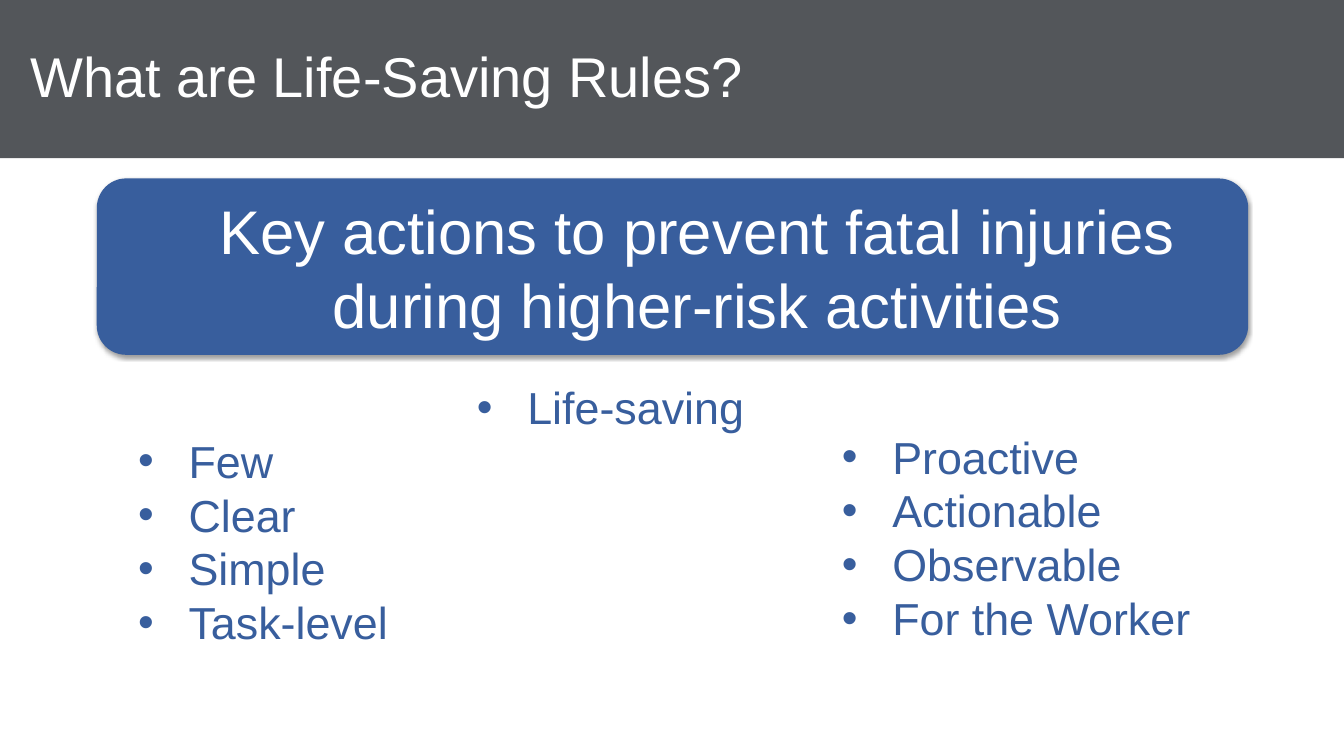
from lxml import etree
from pptx import Presentation
from pptx import util as u
from pptx.dml.color import RGBColor
from pptx.enum import shapes, text
from pptx.oxml import ns

COLORS = {"band": "53565A", "blue": "385E9D", "white": "FFFFFF", "shadow": "000000"}


def rgb(name):
    return RGBColor.from_string(COLORS[name])


def set_all(target, values):
    for name, value in values.items():
        setattr(target, name, value)


def place(item, box):
    sides = ("left", "top", "width", "height")
    set_all(item, {side: u.Inches(length) for side, length in zip(sides, box)})


def indent(para, margin, first=0.0):
    props = para._p.get_or_add_pPr()
    props.set("marL", str(u.Inches(margin)))
    props.set("indent", str(u.Inches(first)))
    return props


def format_para(para, size, color, **values):
    set_all(para, {"space_before": u.Pt(0), **values})
    set_all(para.font, {"name": "Arial", "size": u.Pt(size), "bold": False})
    para.font.color.rgb = rgb(color)


def fill_shape(item, color):
    item.fill.solid()
    item.fill.fore_color.rgb = rgb(color)
    item.line.fill.background()


def add_title_band(page, box, words):
    band = page.shapes.title
    place(band, box)
    fill_shape(band, "band")
    frame = band.text_frame
    set_all(frame, {
        "text": words, "word_wrap": True,
        "auto_size": text.MSO_AUTO_SIZE.NONE,
        "vertical_anchor": text.MSO_ANCHOR.TOP,
        "margin_left": u.Inches(0.2), "margin_right": u.Inches(0.2),
        "margin_top": u.Inches(0.49), "margin_bottom": u.Inches(0.05),
    })
    para = frame.paragraphs[0]
    indent(para, 0.1)
    format_para(para, 40, "white", alignment=text.PP_ALIGN.LEFT, line_spacing=0.9)


def add_soft_shadow(item):
    item.shadow.inherit = False
    effects = item._element.spPr.find(ns.qn("a:effectLst"))
    shadow = etree.SubElement(
        effects, ns.qn("a:outerShdw"), blurRad=str(u.Pt(3.1)), dist=str(u.Pt(1.6)),
        dir="5400000", rotWithShape="0")
    color = etree.SubElement(shadow, ns.qn("a:srgbClr"), val=COLORS["shadow"])
    etree.SubElement(color, ns.qn("a:alpha"), val="38000")


def add_key_message(page, box, words):
    panel = page.shapes.add_shape(
        shapes.MSO_SHAPE.ROUNDED_RECTANGLE, *(u.Inches(length) for length in box))
    fill_shape(panel, "blue")
    add_soft_shadow(panel)
    frame = panel.text_frame
    set_all(frame, {"text": words, "word_wrap": True,
                    "vertical_anchor": text.MSO_ANCHOR.MIDDLE})
    para = frame.paragraphs[0]
    indent(para, 0.5)
    format_para(para, 44, "white", alignment=text.PP_ALIGN.CENTER)


def add_trait_list(holder, box, traits):
    place(holder, box)
    frame = holder.text_frame
    set_all(frame, {"text": "\n".join(traits), "word_wrap": True,
                    "auto_size": text.MSO_AUTO_SIZE.NONE,
                    "vertical_anchor": text.MSO_ANCHOR.TOP})
    for para in frame.paragraphs:
        props = indent(para, 0.5, -0.5)
        etree.SubElement(props, ns.qn("a:buFont"), typeface="Arial")
        etree.SubElement(props, ns.qn("a:buChar"), char="•")
        format_para(para, 32, "blue", alignment=text.PP_ALIGN.LEFT)


def build_rules_slide(deck):
    # Comparison layout: a title and four body placeholders
    page = deck.slides.add_slide(deck.slide_layouts[4])
    holders = {holder.placeholder_format.idx: holder for holder in page.placeholders}

    # Title band and key message
    add_title_band(page, (0, 0, 13.33, 1.57), "What are Life-Saving Rules?")
    add_key_message(page, (0.96, 1.77, 11.42, 1.75),
                    "Key actions to prevent fatal injuries during higher-risk activities")

    # Traits of the rules
    add_trait_list(holders[2], (1.27, 4.25, 2.68, 2.26),
                   ["Few", "Clear", "Simple", "Task-level"])
    add_trait_list(holders[1], (4.63, 3.72, 2.87, 0.64), ["Life-saving"])
    add_trait_list(holders[4], (8.25, 4.21, 3.81, 2.26),
                   ["Proactive", "Actionable", "Observable", "For the Worker"])

    # Unused placeholder
    spare = holders[3]._element
    spare.getparent().remove(spare)


def main():
    deck = Presentation()
    set_all(deck, {"slide_width": u.Inches(13.33), "slide_height": u.Inches(7.5)})
    build_rules_slide(deck)
    deck.save("out.pptx")


if __name__ == "__main__":
    main()
